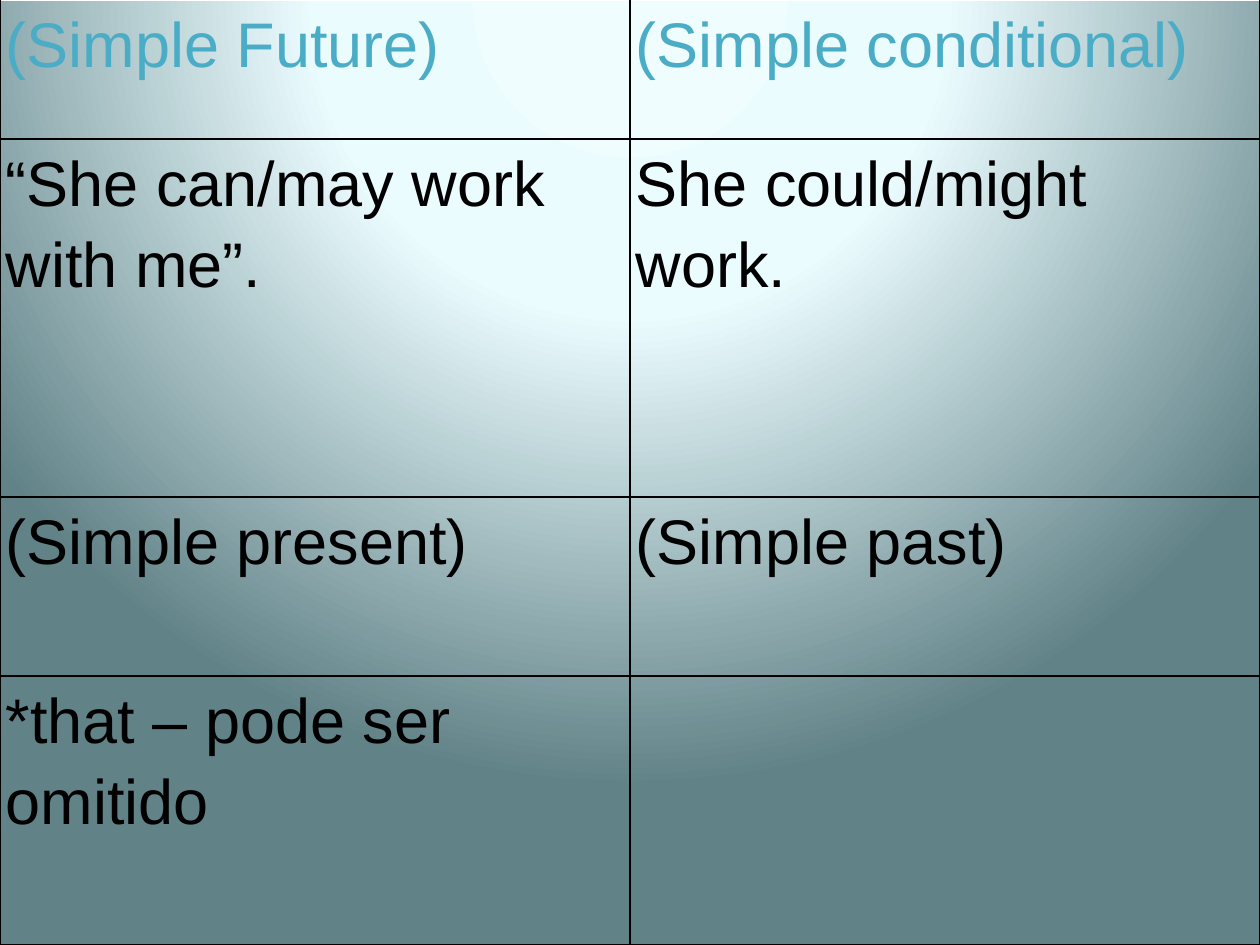
from lxml.etree import SubElement
from pptx import Presentation
from pptx.dml.color import RGBColor
from pptx.oxml import parse_xml
from pptx.oxml.ns import nsdecls, qn
from pptx.util import Emu, Pt

SCALE = 914400 / 126
COLORS = {
    "text": "000000",
    "accent": "4BACC6",
    "border": "000000",
    "glow": "EFFDFF",
    "pale": "EBFCFF",
    "teal": "618287",
}
COLUMN_WIDTHS = [630, 630]
ROW_HEIGHTS = [139, 358, 179, 269]
ROWS = [
    ["(Simple Future)", "(Simple conditional)"],
    ["“She can/may work with me”.", "She could/might work."],
    ["(Simple present)", "(Simple past)"],
    ["*that – pode ser omitido", ""],
]


def px(length):
    return Emu(round(length * SCALE))


def write_cell(cell, text, color="text", size=36, sides="LRTB"):
    cell.margin_left = cell.margin_right = px(6)
    cell.margin_top = cell.margin_bottom = 0
    cell.fill.background()
    properties = cell._tc.get_or_add_tcPr()
    for position, side in enumerate(sides):
        border = parse_xml(
            f'<a:ln{side} {nsdecls("a")} w="12700"><a:solidFill>'
            f'<a:srgbClr val="{COLORS["border"]}"/></a:solidFill></a:ln{side}>'
        )
        properties.insert(position, border)
    if not text:
        return
    para = cell.text_frame.paragraphs[0]
    para.line_spacing = 1.15
    para.space_after = Pt(10)
    span = para.add_run()
    span.text = text
    span.font.name = "Arial"
    span.font.size = Pt(size)
    span.font.bold = False
    span.font.color.rgb = RGBColor.from_string(COLORS[color])


deck = Presentation()
deck.slide_width = px(1260)
deck.slide_height = px(945)
page = deck.slides.add_slide(deck.slide_layouts[6])

page.background.fill.gradient()
gradient = next(page._element.iter(qn("a:gradFill")))
for child in list(gradient):
    gradient.remove(child)
stops = SubElement(gradient, qn("a:gsLst"))
for percent, color in [(0, "glow"), (40, "pale"), (100, "teal")]:
    stop = SubElement(stops, qn("a:gs"), pos=str(percent * 1000))
    SubElement(stop, qn("a:srgbClr"), val=COLORS[color])
circle = SubElement(gradient, qn("a:path"))
circle.set("path", "circle")
SubElement(circle, qn("a:fillToRect"), l="50000", t="-80000", r="50000", b="180000")

frame = page.shapes.add_table(
    len(ROWS), len(COLUMN_WIDTHS), 0, 0, px(sum(COLUMN_WIDTHS)), px(sum(ROW_HEIGHTS))
)
table = frame.table
table.first_row = False
table.horz_banding = False
for column, width in zip(table.columns, COLUMN_WIDTHS):
    column.width = px(width)
for row, height in zip(table.rows, ROW_HEIGHTS):
    row.height = px(height)

for row_index, texts in enumerate(ROWS):
    for column_index, text in enumerate(texts):
        write_cell(
            table.cell(row_index, column_index),
            text,
            color="text" if row_index else "accent",
            sides="LRTB" if row_index else "LRB",
        )

deck.save("out.pptx")
